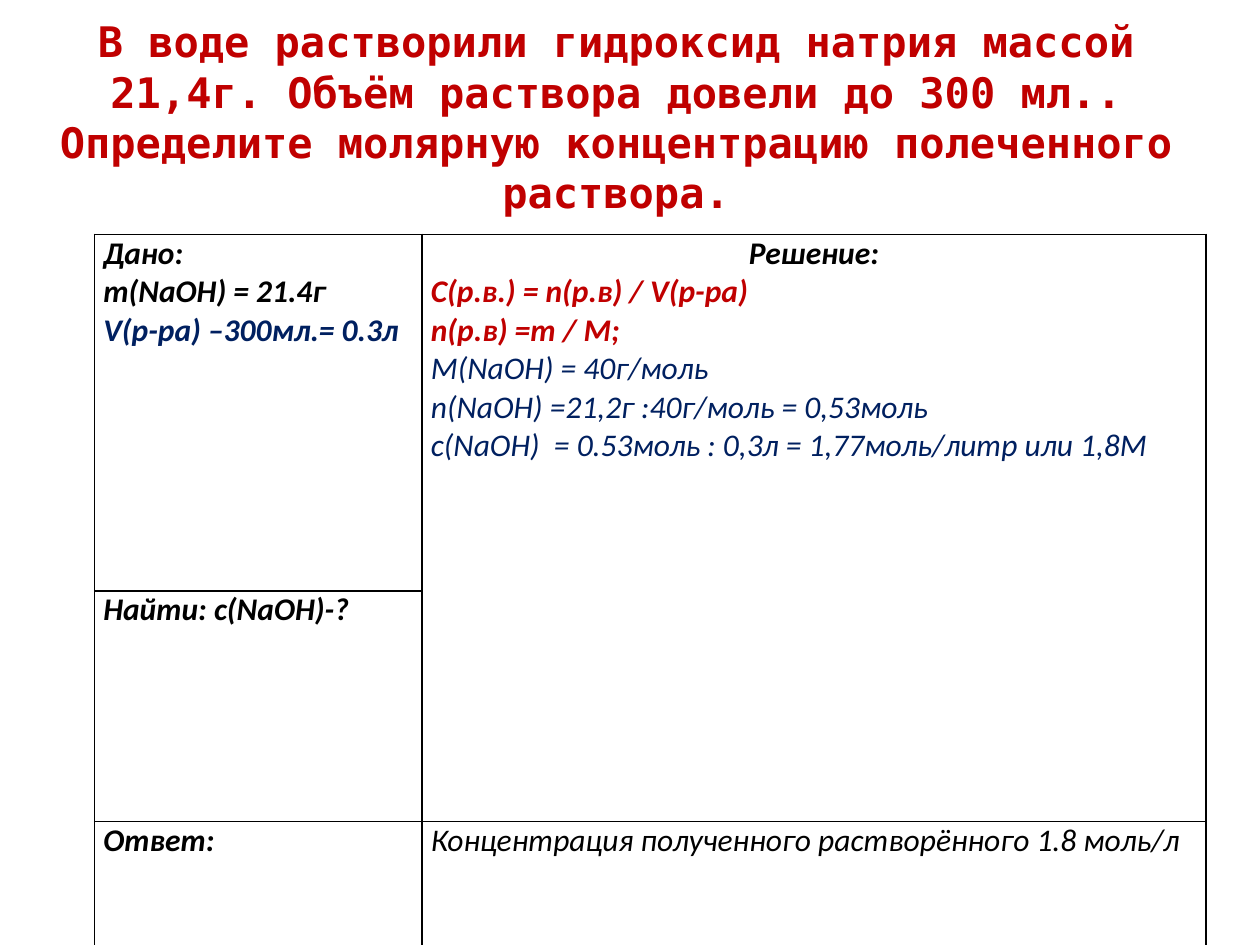
from dataclasses import dataclass

from lxml.etree import SubElement
from pptx import Presentation
from pptx.dml.color import RGBColor
from pptx.enum.text import MSO_ANCHOR, MSO_AUTO_SIZE, PP_ALIGN
from pptx.oxml.ns import qn
from pptx.util import Inches, Pt


@dataclass(frozen=True)
class Theme:
    title_font: str = "DejaVu Sans Mono"
    body_font: str = "Calibri"
    title_size: int = 24
    body_size: int = 18
    red: str = "C00000"
    navy: str = "002060"
    black: str = "000000"
    border: int = 1
    inset: float = 0.07


@dataclass(frozen=True)
class Line:
    text: str
    color: str = Theme.black
    bold: bool = True
    align: PP_ALIGN = PP_ALIGN.LEFT


class Deck:
    """Holds the theme and the current slide; lengths are shares of its size."""

    def __init__(self, theme, width=10, height=7.5):
        self.theme = theme
        self.prs = Presentation()
        self.prs.slide_width = Inches(width)
        self.prs.slide_height = Inches(height)
        self.s = self.prs.slides.add_slide(self.prs.slide_layouts[5])

    def x(self, share):
        return round(self.prs.slide_width * share)

    def y(self, share):
        return round(self.prs.slide_height * share)

    def add_run(self, p, text, font, size, color, bold, italic=False):
        r = p.add_run()
        r.text = text
        r.font.name = font
        r.font.size = Pt(size)
        r.font.bold = bold
        r.font.italic = italic
        r.font.color.rgb = RGBColor.from_string(color)

    def title(self, text, left, top, width, height):
        t = self.theme
        sp = self.s.shapes.title
        sp.left, sp.top = self.x(left), self.y(top)
        sp.width, sp.height = self.x(width), self.y(height)
        tf = sp.text_frame
        tf.word_wrap = True
        tf.auto_size = MSO_AUTO_SIZE.NONE
        tf.vertical_anchor = MSO_ANCHOR.MIDDLE
        p = tf.paragraphs[0]
        p.alignment = PP_ALIGN.CENTER
        self.add_run(p, text, t.title_font, t.title_size, t.red, True)

    def table(self, left, top, cols, rows):
        tbl = self.s.shapes.add_table(
            len(rows), len(cols), self.x(left), self.y(top),
            self.x(sum(cols)), self.y(sum(rows))).table
        tbl.first_row = tbl.horz_banding = False
        for col, share in zip(tbl.columns, cols):
            col.width = self.x(share)
        for row, share in zip(tbl.rows, rows):
            row.height = self.y(share)
        for cell in tbl.iter_cells():
            self.style_cell(cell)
        return tbl

    def style_cell(self, cell):
        t = self.theme
        cell.margin_left = cell.margin_right = Inches(t.inset)
        cell.margin_top = cell.margin_bottom = 0
        pr = cell._tc.get_or_add_tcPr()
        for side in ("lnL", "lnR", "lnT", "lnB"):
            ln = SubElement(pr, qn(f"a:{side}"), w=str(Pt(t.border)))
            fill = SubElement(ln, qn("a:solidFill"))
            SubElement(fill, qn("a:srgbClr"), val=t.black)
        cell.fill.background()

    def fill_cell(self, cell, lines):
        t = self.theme
        tf = cell.text_frame
        for i, line in enumerate(lines):
            p = tf.add_paragraph() if i else tf.paragraphs[0]
            p.alignment = line.align
            self.add_run(p, line.text, t.body_font, t.body_size,
                         line.color, line.bold, italic=True)


def main():
    theme = Theme()
    deck = Deck(theme)
    deck.title(
        "В воде растворили гидроксид натрия массой 21,4г. "
        "Объём раствора довели до 300 мл.. "
        "Определите молярную концентрацию полеченного раствора.",
        0.028, 0.04, 0.922, 1 / 6)

    tbl = deck.table(0.075, 0.248, cols=(0.26, 0.622),
                     rows=(2.83 / 7.5, 1.07 / 7.5, 1.07 / 7.5))
    tbl.cell(0, 1).merge(tbl.cell(1, 1))

    given = [Line("Дано:"),
             Line("m(NaOH) = 21.4г"),
             Line("V(р-ра) –300мл.= 0.3л", theme.navy)]
    solution = [Line("Решение:", align=PP_ALIGN.CENTER),
                Line("С(р.в.) = n(р.в) / V(р-ра)", theme.red),
                Line("n(р.в) =m / M;", theme.red),
                Line("M(NaOH) = 40г/моль", theme.navy, False),
                Line("n(NaOH) =21,2г :40г/моль = 0,53моль", theme.navy, False),
                Line("c(NaOH)  = 0.53моль : 0,3л = 1,77моль/литр или 1,8M",
                     theme.navy, False)]
    answer = Line("Концентрация полученного растворённого 1.8 моль/л", bold=False)
    contents = {(0, 0): given,
                (0, 1): solution,
                (1, 0): [Line("Найти: c(NaOH)-?")],
                (2, 0): [Line("Ответ:")],
                (2, 1): [answer]}
    for (row, col), lines in contents.items():
        deck.fill_cell(tbl.cell(row, col), lines)

    deck.prs.save("out.pptx")


if __name__ == "__main__":
    main()
